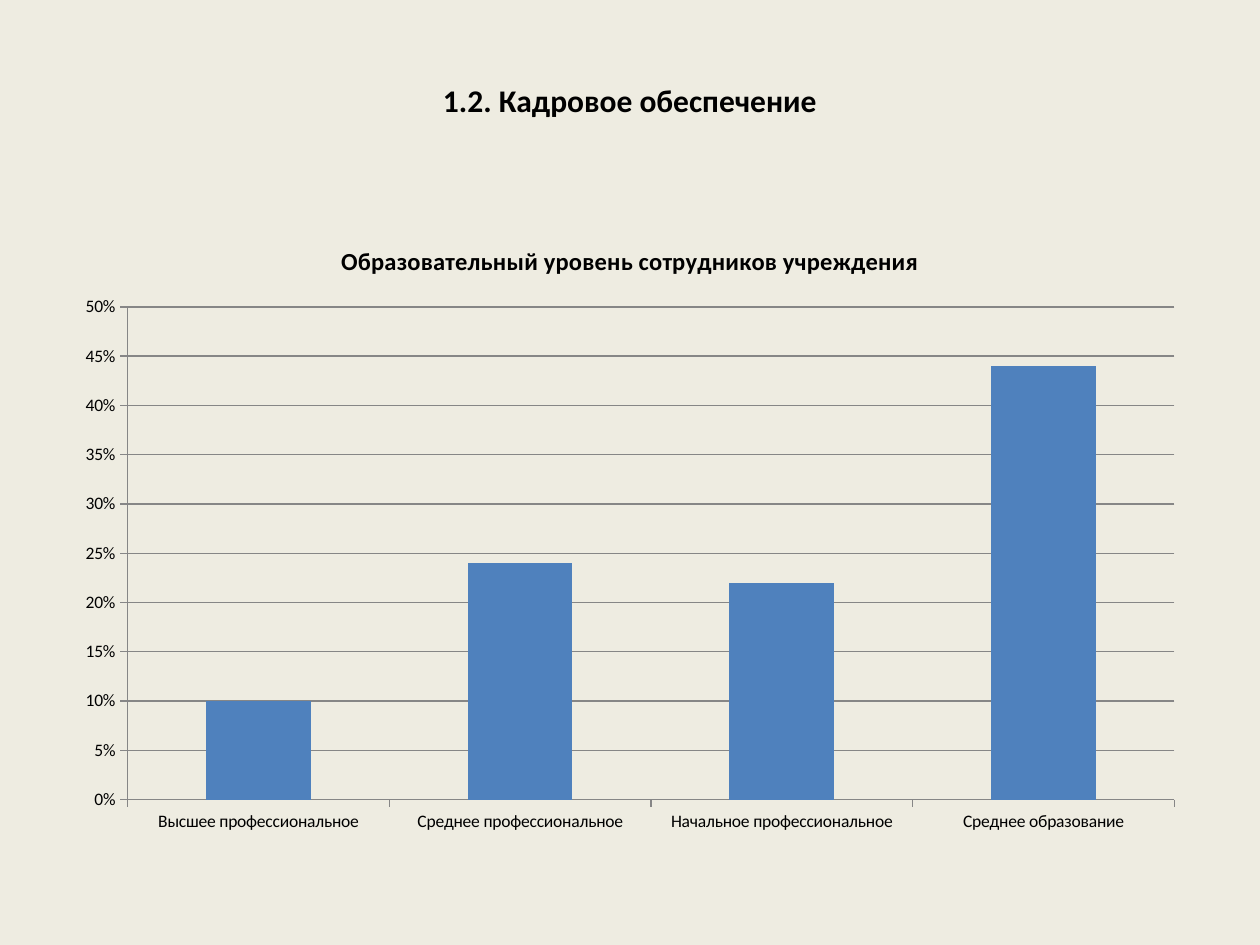
from pptx import Presentation
from pptx.chart.data import CategoryChartData
from pptx.dml.color import RGBColor
from pptx.enum.chart import XL_CHART_TYPE, XL_TICK_MARK
from pptx.enum.text import MSO_ANCHOR, PP_ALIGN
from pptx.util import Inches, Pt

TITLE = "1.2. Кадровое обеспечение"
CHART_TITLE = "Образовательный уровень сотрудников учреждения"
EDUCATION_SHARES = {
    "Высшее профессиональное": 0.1,
    "Среднее профессиональное": 0.24,
    "Начальное профессиональное": 0.22,
    "Среднее образование": 0.44,
}
THEME = {
    "font": "Calibri",
    "background": RGBColor.from_string("EEECE1"),
    "text": RGBColor.from_string("000000"),
    "bar": RGBColor.from_string("4F81BD"),
    "line": RGBColor.from_string("868686"),
    "title": Pt(18),
    "chart_title": Pt(14),
    "label": Pt(10),
}
MARGIN = 0.5
WIDTH, HEIGHT = 10, 7.5
CONTENT_WIDTH = WIDTH - 2 * MARGIN


def style_font(font, size, bold=False):
    font.name = THEME["font"]
    font.size = THEME[size]
    font.bold = bold
    font.color.rgb = THEME["text"]


def add_title(page):
    box = page.shapes.title
    box.left, box.top = Inches(MARGIN), Inches(0.3)
    box.width, box.height = Inches(CONTENT_WIDTH), Inches(1.25)
    frame = box.text_frame
    frame.text = TITLE
    frame.word_wrap = True
    frame.vertical_anchor = MSO_ANCHOR.MIDDLE
    frame.margin_bottom = Inches(0.32)
    para = frame.paragraphs[0]
    para.alignment = PP_ALIGN.CENTER
    style_font(para.font, "title", bold=True)


def add_education_chart(page):
    data = CategoryChartData(number_format="0%")
    data.categories = list(EDUCATION_SHARES)
    data.add_series(CHART_TITLE, list(EDUCATION_SHARES.values()))
    chart = page.shapes.add_chart(
        XL_CHART_TYPE.COLUMN_CLUSTERED, Inches(MARGIN), Inches(1.75),
        Inches(CONTENT_WIDTH), Inches(4.95), data,
    ).chart
    chart.has_legend = False
    style_font(chart.font, "label")

    chart.has_title = True
    chart.chart_title.include_in_layout = False
    heading = chart.chart_title.text_frame
    heading.text = CHART_TITLE
    style_font(heading.paragraphs[0].font, "chart_title", bold=True)

    plot = chart.plots[0]
    plot.gap_width = 150
    plot.vary_by_categories = False
    fill = plot.series[0].format.fill
    fill.solid()
    fill.fore_color.rgb = THEME["bar"]

    shares = chart.value_axis
    shares.minimum_scale, shares.maximum_scale = 0, 0.5
    shares.major_unit = 0.05
    shares.has_major_gridlines = True
    shares.tick_labels.number_format = "0%"
    shares.tick_labels.number_format_is_linked = False
    for axis in (chart.category_axis, shares):
        axis.major_tick_mark = XL_TICK_MARK.OUTSIDE
        axis.minor_tick_mark = XL_TICK_MARK.NONE
    for part in (chart.category_axis, shares, shares.major_gridlines):
        part.format.line.color.rgb = THEME["line"]
        part.format.line.width = Pt(0.75)


def main():
    deck = Presentation()
    deck.slide_width, deck.slide_height = Inches(WIDTH), Inches(HEIGHT)
    page = deck.slides.add_slide(deck.slide_layouts.get_by_name("Title Only"))
    page.background.fill.solid()
    page.background.fill.fore_color.rgb = THEME["background"]
    add_title(page)
    add_education_chart(page)
    deck.save("out.pptx")


if __name__ == "__main__":
    main()
